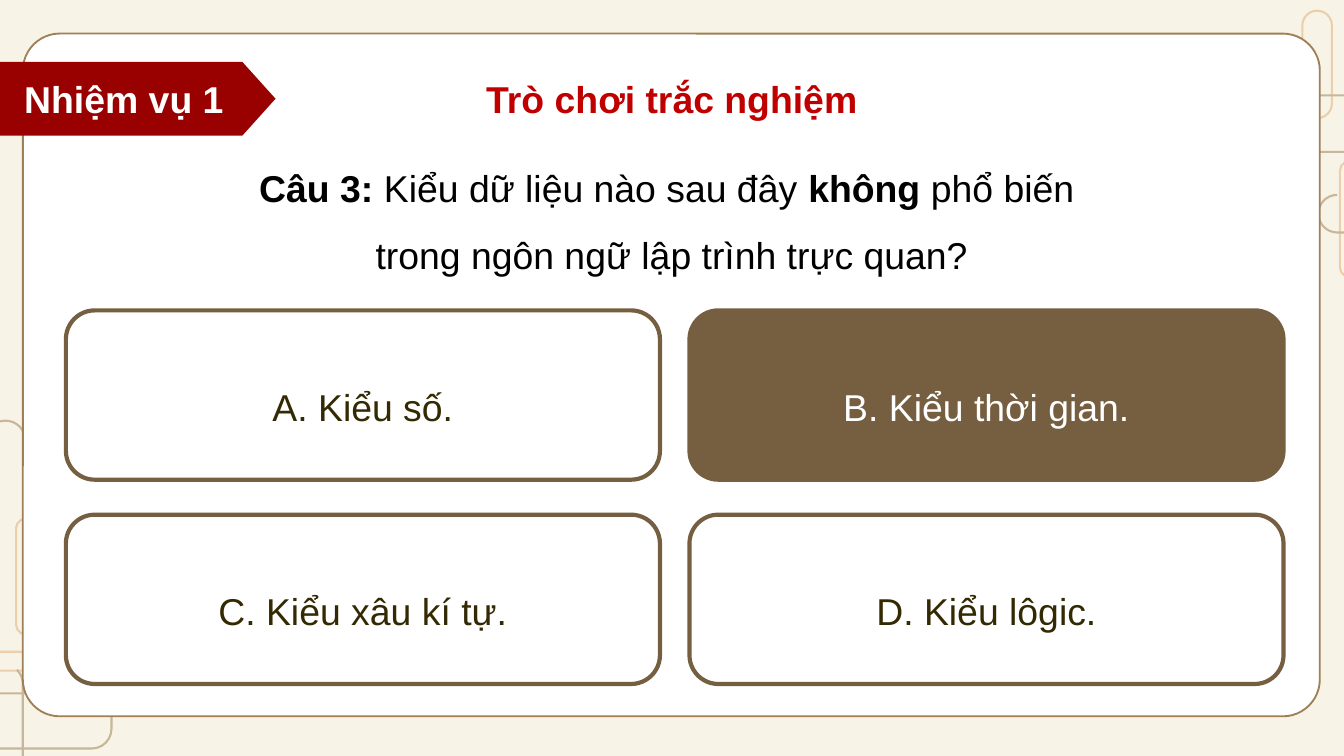
from math import cos, radians, sin

from pptx import Presentation
from pptx.dml.color import RGBColor
from pptx.enum.shapes import MSO_SHAPE
from pptx.enum.text import MSO_ANCHOR, PP_ALIGN
from pptx.util import Inches, Pt

WIDTH = 10
HEIGHT = WIDTH * 9 / 16
UNITS = 1000  # freeform units to the inch
COLORS = {
    "cream": "F7F4E7", "white": "FFFFFF", "black": "000000",
    "border": "9E7F56", "pale_brown": "C8B69A", "pale_orange": "ECCFAA",
    "title": "C00000", "tag": "990000",
    "answer_line": "765F40", "answer_text": "332A03",
}


def color(name):
    return RGBColor.from_string(COLORS[name])


def format_shape(shape, fill=None, line=None, weight=1.0):
    shape.shadow.inherit = False
    if fill:
        shape.fill.solid()
        shape.fill.fore_color.rgb = color(fill)
    else:
        shape.fill.background()
    if line:
        shape.line.color.rgb = color(line)
        shape.line.width = Pt(weight)
    else:
        shape.line.fill.background()


def add_box(slide, kind, box, adjustment=None, **style):
    shape = slide.shapes.add_shape(kind, *map(Inches, box))
    if adjustment is not None:
        shape.adjustments[0] = adjustment
    format_shape(shape, **style)
    return shape


def write_text(shape, lines, ink="black", bold=False, align=PP_ALIGN.CENTER,
               anchor=MSO_ANCHOR.MIDDLE, spacing=1.0, left=0.1):
    """Each line is a list of runs; a run is text and whether it is bold."""
    frame = shape.text_frame
    frame.word_wrap = True
    frame.vertical_anchor = anchor
    frame.margin_left, frame.margin_right = Inches(left), Inches(0.1)
    frame.margin_top = frame.margin_bottom = Inches(0.05)
    for index, runs in enumerate(lines):
        paragraph = frame.add_paragraph() if index else frame.paragraphs[0]
        paragraph.alignment = align
        paragraph.line_spacing = spacing
        for text, emphasis in runs:
            run = paragraph.add_run()
            run.text = text
            run.font.name, run.font.size = "Arial", Pt(20)
            run.font.bold = bold or emphasis
            run.font.color.rgb = color(ink)


def add_open_track(slide, center, radius, start, end, before=(), after=()):
    """An open line that turns around an arc, with straight tails."""
    angles = [radians(start + (end - start) * step / 16) for step in range(17)]
    arc = [(center[0] + radius * cos(a), center[1] + radius * sin(a)) for a in angles]
    points = [(x * UNITS, y * UNITS) for x, y in [*before, *arc, *after]]
    builder = slide.shapes.build_freeform(*points[0], scale=Inches(1) / UNITS)
    builder.add_line_segments(points[1:], close=False)
    format_shape(builder.convert_to_shape(), line="pale_brown", weight=1.12)


def add_ornaments(slide):
    # Closed tracks: box, corner radius as a share of the short side, colour
    tracks = [
        ((9.97, 1.2, 0.14, 0.86), 0.5, "pale_orange"),
        ((9.69, 0.08, 0.22, 0.8), 0.5, "pale_orange"),
        ((9.57, 0.71, 1.26, 0.42), 0.36, "pale_brown"),
        ((-0.43, 5.16, 1.26, 0.41), 0.36, "pale_brown"),
        ((-0.41, 4.85, 0.86, 0.14), 0.5, "pale_orange"),
        ((0.12, 3.86, 0.14, 0.86), 0.5, "pale_orange"),
    ]
    for box, radius, line in tracks:
        add_box(slide, MSO_SHAPE.ROUNDED_RECTANGLE, box, radius, line=line, weight=1.12)
    # Open tracks at the right and left edges
    add_open_track(slide, (9.95, 1.59), 0.14, 90, 270, before=[(10.75, 1.73)])
    add_open_track(slide, (0.04, 3.28), 0.15, 180, 360,
                   before=[(-0.11, 4.35)], after=[(0.19, 3.86)])
    add_open_track(slide, (0.02, 5.09), 0.15, 0, -45, before=[(0.17, 6.16)])


def add_header(slide, box):
    left, top, width, height = box
    title = slide.shapes.title
    slide.shapes.element.append(title.element)  # bring in front of the panel
    title.left, title.top = Inches(left), Inches(top + 0.06)
    title.width, title.height = Inches(width), Inches(height - 0.11)
    write_text(title, [[("Trò chơi trắc nghiệm", False)]], ink="title", bold=True,
               anchor=MSO_ANCHOR.TOP)
    tag = add_box(slide, MSO_SHAPE.PENTAGON, (left, top, 2.05, height), 0.45, fill="tag")
    write_text(tag, [[("Nhiệm vụ 1", False)]], ink="white", bold=True,
               align=PP_ALIGN.LEFT, left=0.18)


def add_question(slide, box):
    question = slide.shapes.add_textbox(*map(Inches, box))
    write_text(question, [
        [("Câu 3: ", True), ("Kiểu dữ liệu nào sau đây ", False),
         ("không ", True), ("phổ biến ", False)],
        [("trong ngôn ngữ lập trình trực quan?", False)],
    ], anchor=MSO_ANCHOR.TOP, spacing=1.5)


def add_answers(slide, box, answers, correct, column_gap=0.22, row_gap=0.26):
    left, top, width, height = box
    cell_width, cell_height = (width - column_gap) / 2, (height - row_gap) / 2
    for index, answer in enumerate(answers):
        row, column = divmod(index, 2)
        cell = (left + column * (cell_width + column_gap),
                top + row * (cell_height + row_gap), cell_width, cell_height)
        chosen = index == correct
        shape = add_box(slide, MSO_SHAPE.ROUNDED_RECTANGLE, cell, 0.17,
                        fill="answer_line" if chosen else "white",
                        line="answer_line", weight=2.25)
        write_text(shape, [[(answer, False)]], spacing=1.5,
                   ink="white" if chosen else "answer_text")


def main():
    presentation = Presentation()
    presentation.slide_width, presentation.slide_height = Inches(WIDTH), Inches(HEIGHT)
    slide = presentation.slides.add_slide(presentation.slide_layouts[5])
    slide.background.fill.solid()
    slide.background.fill.fore_color.rgb = color("cream")

    # Backdrop and panel
    add_ornaments(slide)
    add_box(slide, MSO_SHAPE.ROUNDED_RECTANGLE, (0.17, 0.25, 9.65, 5.08), 0.054,
            fill="white", line="border")
    # Quiz
    add_header(slide, (0, 0.46, WIDTH, 0.55))
    add_question(slide, (0, 1.01, WIDTH, 1.05))
    add_answers(slide, (0.49, 2.31, 9.06, 2.78),
                ["A. Kiểu số.", "B. Kiểu thời gian.", "C. Kiểu xâu kí tự.",
                 "D. Kiểu lôgic."], correct=1)
    presentation.save("out.pptx")


if __name__ == "__main__":
    main()
